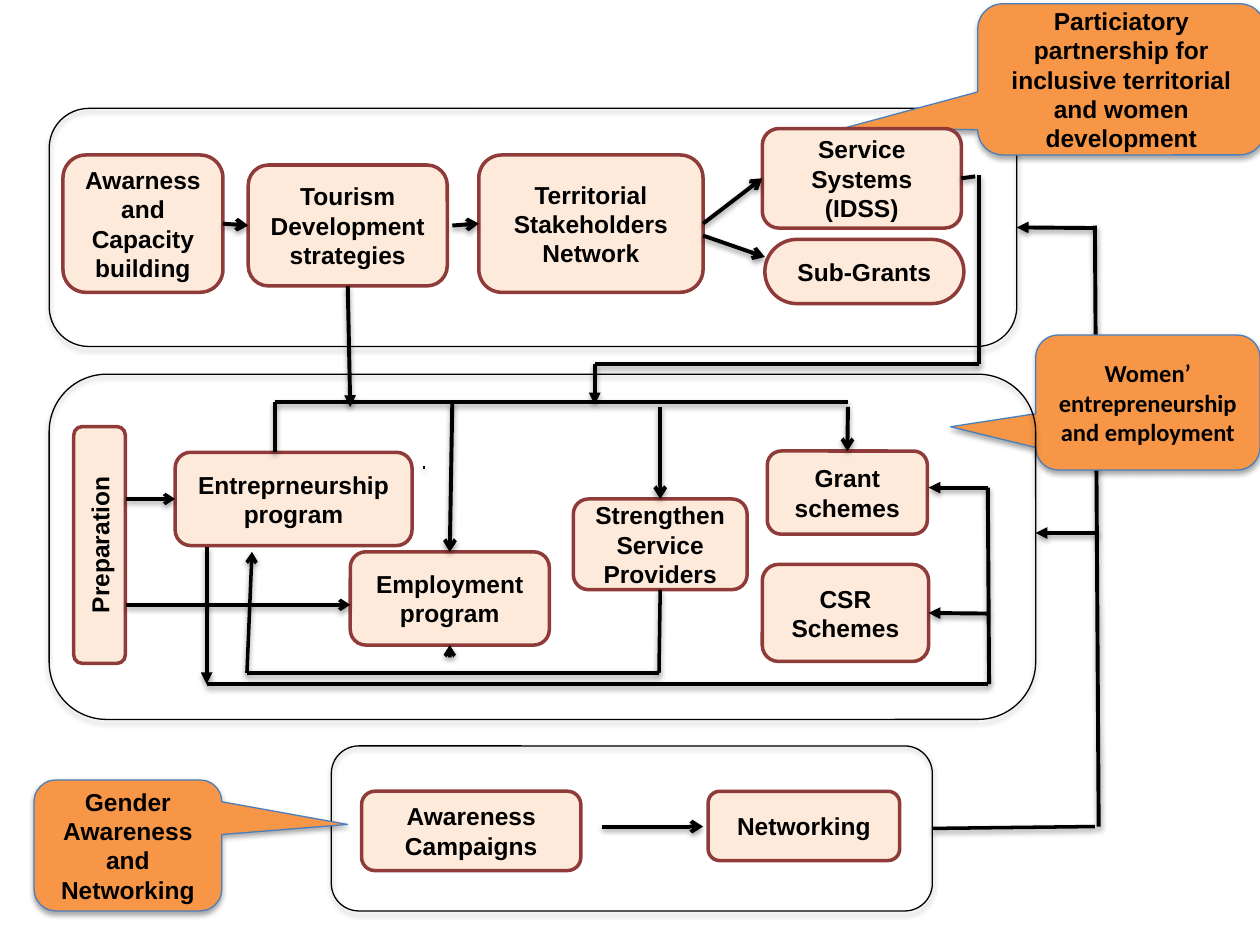
from dataclasses import dataclass

from lxml import etree
from pptx import Presentation
from pptx import util as u
from pptx.dml import color
from pptx.enum import shapes, text
from pptx.oxml import ns

TOP, LEFT, BOTTOM, RIGHT = range(4)


@dataclass(frozen=True)
class Theme:
    """Colours, fonts and sizes of the slide."""
    ink: str = "000000"
    box_fill: str = "FDEADA"
    box_line: str = "8E3B39"
    callout_fill: str = "F79646"
    callout_line: str = "4B7EBC"
    font: str = "Arial"
    alternate_font: str = "Calibri"
    text_size: float = 14
    thin: float = 0.75
    medium: float = 2
    thick: float = 2.25


class Diagram:
    """Draws diagram elements on a grid of 100 columns by 75 rows."""

    def __init__(self, presentation, theme):
        self.theme = theme
        self.column = presentation.slide_width / 100
        self.row = presentation.slide_height / 75
        self.slide = presentation.slides.add_slide(presentation.slide_layouts[6])

    def x(self, columns):
        """Return the length of a number of columns."""
        return u.Emu(round(columns * self.column))

    def y(self, rows):
        """Return the length of a number of rows."""
        return u.Emu(round(rows * self.row))

    def shadow(self, shape, opacity):
        """Give the shape a soft shadow straight below."""
        properties = shape._element.spPr
        effects = etree.SubElement(properties, ns.qn("a:effectLst"))
        outer = etree.SubElement(
            effects, ns.qn("a:outerShdw"), blurRad="40000", dist="22000",
            dir="5400000", rotWithShape="0")
        tint = etree.SubElement(outer, ns.qn("a:srgbClr"), val=self.theme.ink)
        etree.SubElement(tint, ns.qn("a:alpha"), val=str(opacity * 1000))

    def shape(self, kind, place, fill, line, width, adjustments=()):
        """Add a preset shape with its fill and line."""
        left, top, columns, rows = place
        shape = self.slide.shapes.add_shape(
            kind, self.x(left), self.y(top), self.x(columns), self.y(rows))
        for index, value in enumerate(adjustments):
            shape.adjustments[index] = value
        if fill:
            shape.fill.solid()
            shape.fill.fore_color.rgb = color.RGBColor.from_string(fill)
        else:
            shape.fill.background()
        shape.line.color.rgb = color.RGBColor.from_string(line)
        shape.line.width = u.Pt(width)
        return shape

    def label(self, shape, words, font=None):
        """Set centred bold text, one paragraph per line of words."""
        frame = shape.text_frame
        frame.word_wrap = True
        frame.vertical_anchor = text.MSO_ANCHOR.MIDDLE
        frame.text = words
        for paragraph in frame.paragraphs:
            paragraph.alignment = text.PP_ALIGN.CENTER
            paragraph.font.name = font or self.theme.font
            paragraph.font.size = u.Pt(self.theme.text_size)
            paragraph.font.bold = True
            paragraph.font.color.rgb = color.RGBColor.from_string(self.theme.ink)

    def frame(self, *place):
        """Add a rounded outline around one stage."""
        shape = self.shape(shapes.MSO_SHAPE.ROUNDED_RECTANGLE, place, None,
                           self.theme.ink, self.theme.thin)
        self.shadow(shape, 35)
        return shape

    def box(self, words, *place, rounding=0.167, rotation=0):
        """Add a labelled step."""
        shape = self.shape(shapes.MSO_SHAPE.ROUNDED_RECTANGLE, place,
                           self.theme.box_fill, self.theme.box_line,
                           self.theme.medium, [rounding])
        shape.shadow.inherit = False
        shape.rotation = rotation
        self.label(shape, words)
        return shape

    def callout(self, words, *place, tip, font=None):
        """Add a speech callout whose tip is a share of its size from its centre."""
        shape = self.shape(shapes.MSO_SHAPE.ROUNDED_RECTANGULAR_CALLOUT, place,
                           self.theme.callout_fill, self.theme.callout_line,
                           self.theme.thin, [*tip, 0.167])
        self.shadow(shape, 35)
        self.label(shape, words, font)

    def connect(self, start, end, arrow=None, width=None):
        """Join two ends, each a grid point or a shape with its side."""
        joined = [not isinstance(spot[0], (int, float)) for spot in (start, end)]
        points = [(0, 0) if join else (self.x(spot[0]), self.y(spot[1]))
                  for join, spot in zip(joined, (start, end))]
        line = self.slide.shapes.add_connector(
            shapes.MSO_CONNECTOR.STRAIGHT, *points[0], *points[1])
        if joined[0]:
            line.begin_connect(*start)
        if joined[1]:
            line.end_connect(*end)
        line.line.color.rgb = color.RGBColor.from_string(self.theme.ink)
        line.line.width = u.Pt(width or self.theme.thick)
        if arrow:
            outline = line._element.spPr.find(ns.qn("a:ln"))
            etree.SubElement(outline, ns.qn("a:tailEnd"), type=arrow)
        self.shadow(line, 38)

    def route(self, *points, arrow=None, width=None):
        """Connect a chain of points, with the arrowhead on the last stretch."""
        for index, ends in enumerate(zip(points, points[1:]), 2):
            self.connect(*ends, arrow if index == len(points) else None, width)


def main():
    """Build the programme diagram."""
    presentation = Presentation()
    presentation.slide_width, presentation.slide_height = u.Inches(10), u.Inches(7.5)
    theme = Theme()
    diagram = Diagram(presentation, theme)
    box, callout, route = diagram.box, diagram.callout, diagram.route
    medium = theme.medium

    territory = diagram.frame(3.9, 8.6, 76.8, 18.9)
    gender = diagram.frame(26.3, 59.2, 47.7, 13.1)
    route((gender, RIGHT), (86.9, 65.6), width=medium)
    route((87.2, 65.6), (86.9, 17.9))

    callout("Particiatory partnership for inclusive territorial and women development",
            77.6, 0.3, 22.8, 12, tip=(-0.96, 0.32))
    callout("Women’ entrepreneurship and employment", 82.2, 26.6, 17.8, 10.7,
            tip=(-0.88, 0.18), font=theme.alternate_font)
    callout("Gender Awareness and Networking", 2.7, 61.9, 14.9, 10.4, tip=(1.17, -0.16))
    diagram.frame(3.9, 29.7, 78.3, 27.4)

    awareness = box("Awarness and Capacity building", 5, 12.3, 12.7, 10.9)
    tourism = box("Tourism Development strategies", 19.7, 13.1, 15.8, 9.6)
    network = box("Territorial Stakeholders Network", 38, 12.3, 17.8, 10.9)
    services = box("Service Systems (IDSS)", 60.5, 10.2, 15.8, 7.9)
    box("Sub-Grants", 60.7, 19, 15.8, 5.1, rounding=0.5)

    box("Preparation", -1.5, 41.2, 18.8, 4.1, rotation=270)
    entrepreneurship = box("Entreprneurship program", 13.9, 35.9, 18.8, 7.4)
    employment = box("Employment program", 27.8, 43.8, 15.8, 7.4)
    providers = box("Strengthen\nService Providers", 45.5, 39.6, 13.8, 7.2)
    grants = box("Grant schemes", 60.9, 35.8, 12.7, 6.6)
    csr = box("CSR Schemes", 60.5, 44.8, 13.2, 7.7)

    box("Awareness Campaigns", 28.7, 62.8, 17.4, 6.3)
    box("Networking", 56.2, 62.8, 15.2, 5.5)

    route((awareness, RIGHT), (tourism, LEFT), arrow="arrow")
    route((35.9, 17.9), (network, LEFT), arrow="arrow")
    route((network, RIGHT), (services, LEFT), arrow="arrow")
    route((55.8, 18.7), (60.7, 20.4), arrow="arrow")
    route((tourism, BOTTOM), (27.8, 32.3), arrow="triangle")
    route((services, RIGHT), (77.4, 14))
    route((77.7, 13.9), (77.7, 28.9), (47.2, 28.9), (47.2, 32.1), arrow="triangle")

    route((21.8, 35.9), (21.8, 31.9))
    route((21.8, 31.9), (67.3, 31.9), width=medium)
    route((35.9, 31.9), (employment, TOP), arrow="arrow")
    route((52.4, 32.3), (providers, TOP), arrow="arrow")
    route((67.3, 32.3), (grants, TOP), arrow="arrow")
    route((33.6, 37.1), (33.7, 37.1), width=medium)

    route((10, 39.6), (entrepreneurship, LEFT), arrow="arrow", width=medium)
    route((10, 48), (27.8, 48), arrow="arrow", width=medium)
    route((providers, BOTTOM), (52.3, 53.4), (19.6, 53.4), (20, 43.8),
          arrow="arrow", width=medium)
    route((35.7, 51.5), (employment, BOTTOM), arrow="arrow", width=medium)
    route((16.4, 43.4), (16.4, 54.3), arrow="triangle")
    route((16.4, 54.3), (78.4, 54.3), width=medium)
    route((78.5, 54.3), (78.4, 38.7), (73.7, 38.7), arrow="triangle")
    route((78.5, 48.7), (csr, RIGHT), arrow="triangle")

    route((86.9, 18.1), (territory, RIGHT), arrow="triangle")
    route((87.2, 42.3), (82.2, 42.3), arrow="triangle")
    route((47.8, 65.6), (55.8, 65.6), arrow="arrow")
    presentation.save("out.pptx")


if __name__ == "__main__":
    main()
